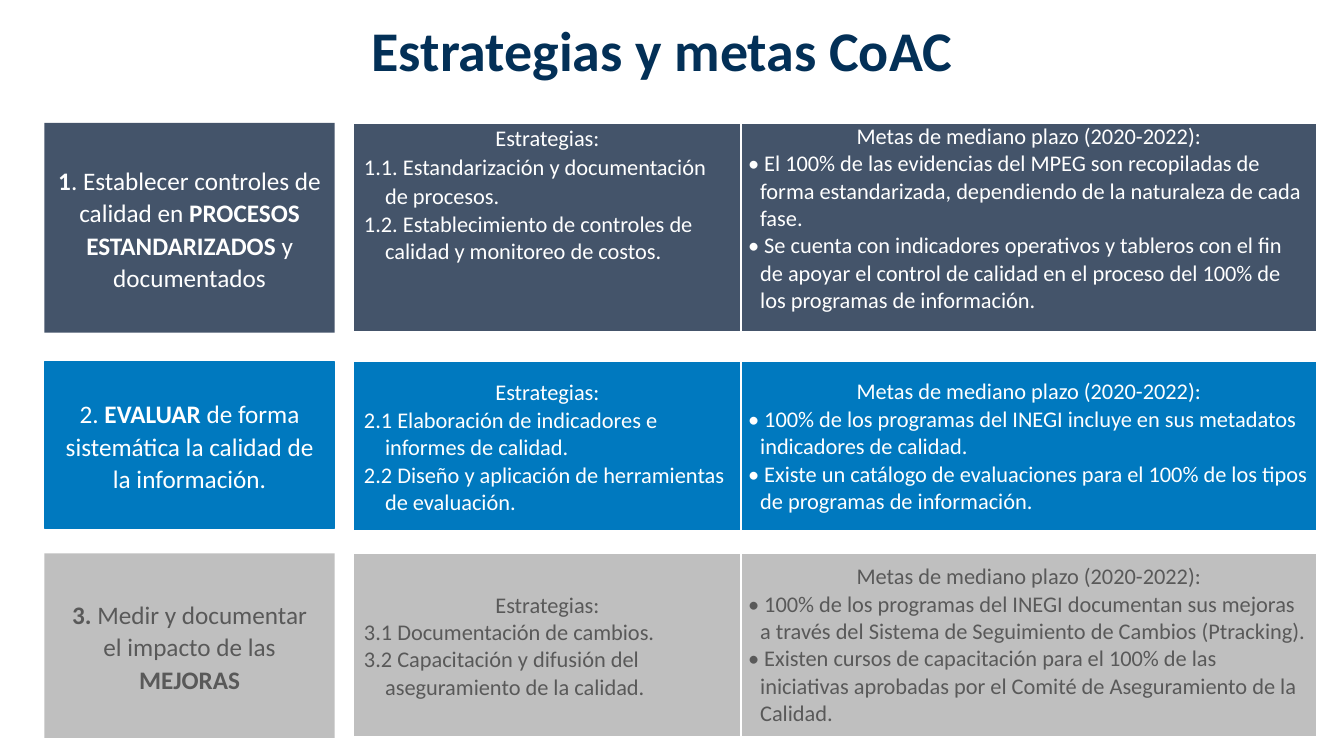
from dataclasses import dataclass

import pptx
import pptx.dml.color
import pptx.enum.shapes
import pptx.enum.text
import pptx.oxml
import pptx.oxml.ns
import pptx.presentation
import pptx.slide
import pptx.table
import pptx.text.text
import pptx.util

Inches = pptx.util.Inches
Pt = pptx.util.Pt
Align = pptx.enum.text.PP_ALIGN
Anchor = pptx.enum.text.MSO_ANCHOR


@dataclass(frozen=True)
class Theme:
    font: str = "Calibri"
    title_size: int = 40
    objective_size: int = 18
    detail_size: int = 16
    title: str = "033057"
    slate: str = "44546A"
    blue: str = "0079BF"
    silver: str = "BFBFBF"
    white: str = "FFFFFF"
    gray: str = "595959"


THEME = Theme()
OBJECTIVE_LEFT, OBJECTIVE_WIDTH = 0.44, 2.88
DETAIL_LEFT = 3.51
DETAIL_WIDTHS = (3.84, 5.71)
BORDERS = {"lnL": 1, "lnR": 1, "lnT": 1, "lnB": 3}


@dataclass(frozen=True)
class Detail:
    heading: str
    items: tuple[str, ...]
    indent: float
    hanging: float
    space_after: int = 0
    loose_paragraphs: int = 0


@dataclass(frozen=True)
class Band:
    top: float
    height: float
    objective_height: float
    fill: str
    ink: str
    objective: tuple[tuple[str, bool], ...]
    strategies: Detail
    goals: Detail
    anchor: Anchor = Anchor.MIDDLE
    outlined: bool = False


def strategies(*items: str, space_after: int = 0, loose: int = 1) -> Detail:
    return Detail("Estrategias:", items, 0.24, 0.21, space_after, loose)


def goals(*items: str) -> Detail:
    bulleted = tuple(f"• {item}" for item in items)
    return Detail("Metas de mediano plazo (2020-2022):", bulleted, 0.12, 0.12, 6)


BANDS = (
    Band(
        1.22, 2.08, 2.08, THEME.slate, THEME.white,
        (("1", True), (". Establecer controles de calidad en ", False),
         ("PROCESOS ESTANDARIZADOS ", True), ("y documentados", False)),
        strategies("1.1. Estandarización y documentación de procesos.",
                   "1.2. Establecimiento de controles de calidad y monitoreo de costos.",
                   loose=2),
        goals("El 100% de las evidencias del MPEG son recopiladas de forma estandarizada, "
              "dependiendo de la naturaleza de cada fase.",
              "Se cuenta con indicadores operativos y tableros con el fin de apoyar el control "
              "de calidad en el proceso del 100% de los programas de información."),
        anchor=Anchor.TOP,
    ),
    Band(
        3.59, 1.69, 1.65, THEME.blue, THEME.white,
        (("2. ", False), ("EVALUAR", True),
         (" de forma sistemática la calidad de la información.", False)),
        strategies("2.1 Elaboración de indicadores e informes de calidad.",
                   "2.2 Diseño y aplicación de herramientas de evaluación.",
                   space_after=6),
        goals("100% de los programas del INEGI incluye en sus metadatos indicadores de calidad.",
              "Existe un catálogo de evaluaciones para el 100% de los tipos de programas "
              "de información."),
        outlined=True,
    ),
    Band(
        5.49, 1.83, 1.83, THEME.silver, THEME.gray,
        (("3. ", True), ("Medir y documentar\nel impacto de las\n", False), ("MEJORAS", True)),
        strategies("3.1 Documentación de cambios.",
                   "3.2 Capacitación y difusión del aseguramiento de la calidad."),
        goals("100% de los programas del INEGI documentan sus mejoras a través del Sistema de "
              "Seguimiento de Cambios (Ptracking).",
              "Existen cursos de capacitación para el 100% de las iniciativas aprobadas por el "
              "Comité de Aseguramiento de la Calidad."),
    ),
)


def rgb(color: str) -> pptx.dml.color.RGBColor:
    return pptx.dml.color.RGBColor.from_string(color)


def style_runs(paragraph: pptx.text.text._Paragraph, size: int, color: str) -> None:
    for run in paragraph.runs:
        run.font.name = THEME.font
        run.font.size = Pt(size)
        run.font.color.rgb = rgb(color)


def draw_title(slide: pptx.slide.Slide) -> None:
    title = slide.shapes.title
    title.left, title.top = Inches(-0.1), Inches(0.21)
    title.width, title.height = Inches(13.33), Inches(0.63)
    frame = title.text_frame
    frame.text = "Estrategias y metas CoAC"
    frame.auto_size = pptx.enum.text.MSO_AUTO_SIZE.NONE
    frame.vertical_anchor = Anchor.MIDDLE
    heading = frame.paragraphs[0]
    heading.alignment = Align.CENTER
    heading.line_spacing = 0.9
    style_runs(heading, THEME.title_size, THEME.title)
    heading.runs[0].font.bold = True


def draw_objective(slide: pptx.slide.Slide, band: Band) -> None:
    box = slide.shapes.add_shape(
        pptx.enum.shapes.MSO_SHAPE.RECTANGLE, Inches(OBJECTIVE_LEFT), Inches(band.top),
        Inches(OBJECTIVE_WIDTH), Inches(band.objective_height))
    box.shadow.inherit = False
    box.fill.solid()
    box.fill.fore_color.rgb = rgb(band.fill)
    if band.outlined:
        box.line.color.rgb = rgb(band.fill)
        box.line.width = Pt(1)
    else:
        box.line.fill.background()
    box.text_frame.word_wrap = True
    box.text_frame.vertical_anchor = Anchor.MIDDLE
    paragraph = box.text_frame.paragraphs[0]
    paragraph.alignment = Align.CENTER
    paragraph.line_spacing = 1.07
    paragraph.space_after = Pt(6)
    for text, bold in band.objective:
        for index, line in enumerate(text.split("\n")):
            if index:
                paragraph.add_line_break()
            if line:
                run = paragraph.add_run()
                run.text = line
                run.font.bold = bold
    style_runs(paragraph, THEME.objective_size, band.ink)


def add_borders(cell: pptx.table._Cell) -> None:
    properties = cell._tc.get_or_add_tcPr()
    for index, (edge, points) in enumerate(BORDERS.items()):
        properties.insert(index, pptx.oxml.parse_xml(
            f'<a:{edge} {pptx.oxml.ns.nsdecls("a")} w="{Pt(points)}"><a:solidFill>'
            f'<a:srgbClr val="{THEME.white}"/></a:solidFill></a:{edge}>'))


def fill_cell(cell: pptx.table._Cell, detail: Detail, band: Band) -> None:
    cell.fill.solid()
    cell.fill.fore_color.rgb = rgb(band.fill)
    add_borders(cell)
    cell.vertical_anchor = band.anchor
    cell.margin_left = cell.margin_right = Inches(0.07)
    cell.margin_top = cell.margin_bottom = 0
    cell.text_frame.text = "\n".join((detail.heading, *detail.items))
    paragraphs = cell.text_frame.paragraphs
    for index, paragraph in enumerate(paragraphs):
        paragraph.line_spacing = 1.07 if index < detail.loose_paragraphs else 1.0
        if index == 0:
            paragraph.alignment = Align.CENTER
        else:
            properties = paragraph._p.get_or_add_pPr()
            properties.set("marL", str(Inches(detail.indent)))
            properties.set("indent", str(-Inches(detail.hanging)))
        style_runs(paragraph, THEME.detail_size, band.ink)
    paragraphs[-1].space_after = Pt(detail.space_after)


def draw_details(slide: pptx.slide.Slide, band: Band) -> None:
    table = slide.shapes.add_table(
        1, len(DETAIL_WIDTHS), Inches(DETAIL_LEFT), Inches(band.top),
        Inches(sum(DETAIL_WIDTHS)), Inches(band.height)).table
    table.first_row = table.horz_banding = False
    for column, width in zip(table.columns, DETAIL_WIDTHS):
        column.width = Inches(width)
    for cell, detail in zip(table.rows[0].cells, (band.strategies, band.goals)):
        fill_cell(cell, detail, band)


def main() -> None:
    deck = pptx.Presentation()
    deck.slide_width, deck.slide_height = Inches(13.33), Inches(7.5)
    slide = deck.slides.add_slide(deck.slide_layouts[5])
    draw_title(slide)
    for band in BANDS:
        draw_details(slide, band)
        draw_objective(slide, band)
    deck.save("out.pptx")


if __name__ == "__main__":
    main()
